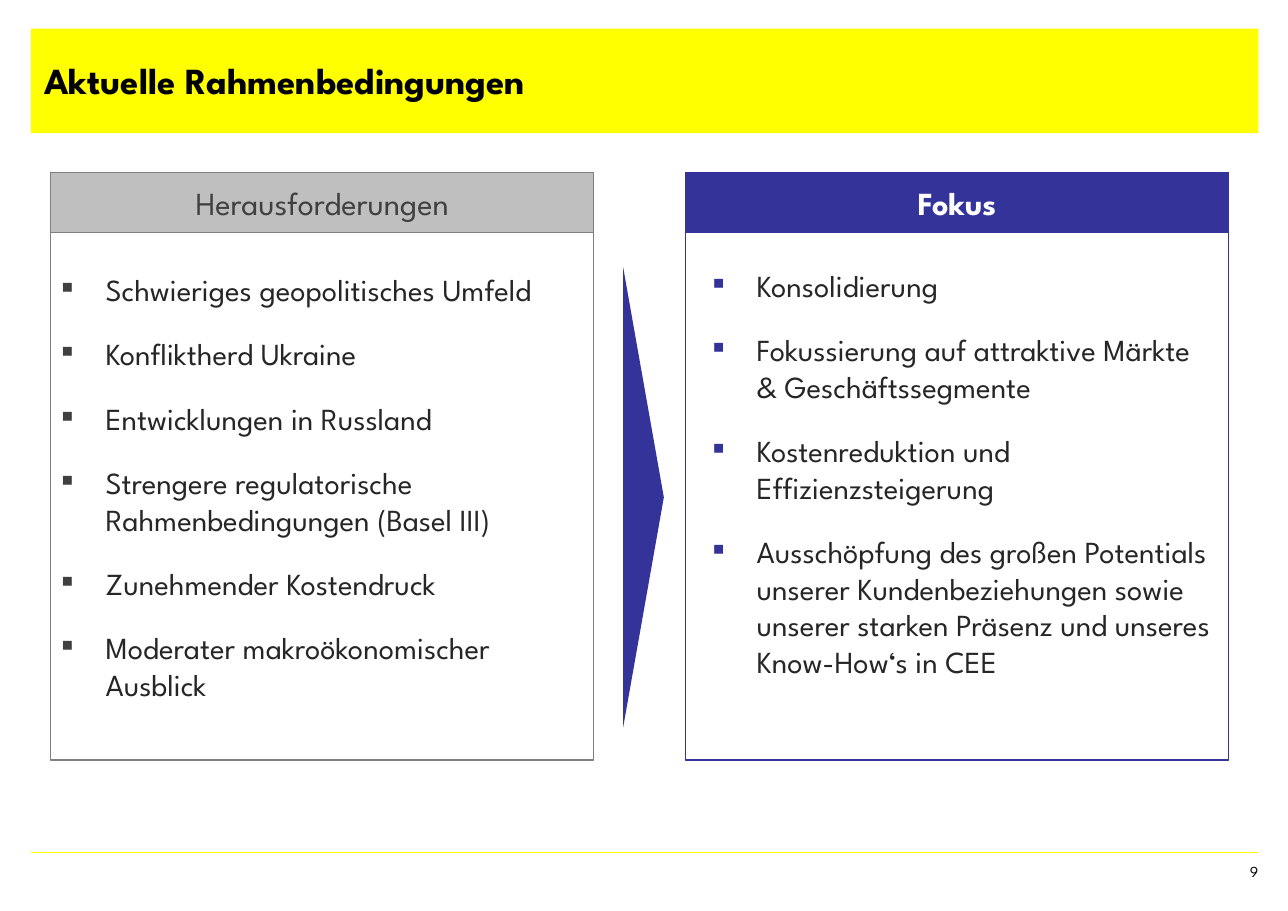
from dataclasses import dataclass

from lxml.etree import SubElement
from pptx import Presentation
from pptx.dml.color import RGBColor
from pptx.enum.shapes import MSO_CONNECTOR, MSO_SHAPE
from pptx.enum.text import MSO_ANCHOR, MSO_AUTO_SIZE, PP_ALIGN
from pptx.oxml.ns import qn
from pptx.shapes.autoshape import Shape
from pptx.slide import Slide
from pptx.text.text import TextFrame, _Paragraph
from pptx.util import Emu, Inches, Pt

FONT = "League Spartan"
WIDTH, HEIGHT = Inches(11.69), Inches(8.27)
COLORS = {
    "yellow": "FFFF00", "blue": "333399", "silver": "BFBFBF", "gray": "808080",
    "dark": "404040", "body": "262626", "black": "000000", "white": "FFFFFF",
}
PANEL_WIDTH, PANEL_BOTTOM = 42.17, 83.43
HEADER_TOP, HEADER_HEIGHT = 18.98, 6.53
INDENT = Inches(0.4)


@dataclass(frozen=True)
class Box:
    """Place and size in percent of the slide's width and height."""
    left: float
    top: float
    width: float
    height: float

    def emu(self) -> tuple[Emu, Emu, Emu, Emu]:
        """Return the box in slide units."""
        return (Emu(round(WIDTH * self.left / 100)), Emu(round(HEIGHT * self.top / 100)),
                Emu(round(WIDTH * self.width / 100)), Emu(round(HEIGHT * self.height / 100)))


@dataclass(frozen=True)
class Style:
    """Size, colour and weight of a run."""
    size: float
    color: str
    bold: bool = False


@dataclass(frozen=True)
class Panel:
    """A headed frame with a bulleted list."""
    title: str
    style: Style
    left: float
    frame_top: float
    fill: str
    edge: str
    bullet: str
    list_box: Box
    items: tuple[str, ...]


PANELS = (
    Panel("Herausforderungen", Style(21, "dark"), 3.93, 25.51, "silver", "gray", "dark",
          Box(3.93, 29.14, 42.17, 69.77),
          ("Schwieriges geopolitisches Umfeld", "Konfliktherd Ukraine",
           "Entwicklungen in Russland",
           "Strengere regulatorische Rahmenbedingungen (Basel III)",
           "Zunehmender Kostendruck", "Moderater makroökonomischer Ausblick")),
    Panel("Fokus", Style(21, "white", True), 53.21, 25.15, "blue", "blue", "blue",
          Box(54.49, 28.66, 40.89, 51.03),
          ("Konsolidierung", "Fokussierung auf attraktive Märkte & Geschäftssegmente",
           "Kostenreduktion und Effizienzsteigerung",
           "Ausschöpfung des großen Potentials unserer Kundenbeziehungen sowie "
           "unserer starken Präsenz und unseres Know-How‘s in CEE")),
)


def rgb(name: str) -> RGBColor:
    """Look up a named colour."""
    return RGBColor.from_string(COLORS[name])


def add_run(p: _Paragraph, text: str, style: Style) -> None:
    """Append one styled run."""
    r = p.add_run()
    r.text = text
    r.font.name, r.font.size, r.font.bold = FONT, Pt(style.size), style.bold
    r.font.color.rgb = rgb(style.color)


def set_label(tf: TextFrame, text: str, style: Style, align: PP_ALIGN, anchor: MSO_ANCHOR) -> None:
    """Fill a frame without margins with a single line."""
    tf.word_wrap, tf.vertical_anchor = True, anchor
    tf.margin_left = tf.margin_top = tf.margin_right = tf.margin_bottom = 0
    p = tf.paragraphs[0]
    p.alignment = align
    add_run(p, text, style)


def add_block(s: Slide, kind: MSO_SHAPE, box: Box, fill: str = "", edge: str = "",
              weight: float = 1) -> Shape:
    """Draw a preset shape with optional fill and outline."""
    sp = s.shapes.add_shape(kind, *box.emu())
    sp.shadow.inherit = False
    if fill:
        sp.fill.solid()
        sp.fill.fore_color.rgb = rgb(fill)
    else:
        sp.fill.background()
    if edge:
        sp.line.color.rgb = rgb(edge)
        sp.line.width = Pt(weight)
    else:
        sp.line.fill.background()
    return sp


def add_label(s: Slide, box: Box, text: str, style: Style, align: PP_ALIGN,
              anchor: MSO_ANCHOR) -> None:
    """Add a text box holding a single line."""
    set_label(s.shapes.add_textbox(*box.emu()).text_frame, text, style, align, anchor)


def set_bullet(p: _Paragraph, color: str) -> None:
    """Give a paragraph a hanging square bullet."""
    ppr = p._p.get_or_add_pPr()
    ppr.set("marL", str(INDENT))
    ppr.set("indent", str(-INDENT))
    SubElement(SubElement(ppr, qn("a:buClr")), qn("a:srgbClr"), val=COLORS[color])
    SubElement(ppr, qn("a:buFont"), typeface=FONT)
    SubElement(ppr, qn("a:buChar"), char="▪")


def add_list(s: Slide, panel: Panel) -> None:
    """Add the bulleted list of a panel."""
    tf = s.shapes.add_textbox(*panel.list_box.emu()).text_frame
    tf.word_wrap, tf.auto_size = True, MSO_AUTO_SIZE.SHAPE_TO_FIT_TEXT
    for i, item in enumerate(panel.items):
        p = tf.add_paragraph() if i else tf.paragraphs[0]
        p.space_before = Pt(18 if i else 0)
        set_bullet(p, panel.bullet)
        add_run(p, item, Style(20, "body"))


def add_panel(s: Slide, panel: Panel) -> None:
    """Draw frame, list and header of a panel."""
    frame = Box(panel.left, panel.frame_top, PANEL_WIDTH, PANEL_BOTTOM - panel.frame_top)
    add_block(s, MSO_SHAPE.RECTANGLE, frame, edge=panel.edge)
    add_list(s, panel)
    header = Box(panel.left, HEADER_TOP, PANEL_WIDTH, HEADER_HEIGHT)
    sp = add_block(s, MSO_SHAPE.RECTANGLE, header, panel.fill, panel.edge, 0.75)
    set_label(sp.text_frame, panel.title, panel.style, PP_ALIGN.CENTER, MSO_ANCHOR.MIDDLE)


def add_rule(s: Slide, box: Box, color: str) -> None:
    """Draw a straight line across a box."""
    x, y, w, h = box.emu()
    line = s.shapes.add_connector(MSO_CONNECTOR.STRAIGHT, x, y, x + w, y + h)
    line.line.color.rgb, line.line.width = rgb(color), Pt(1)
    SubElement(line._element.spPr, qn("a:effectLst"))


def main() -> None:
    """Build and save the slide."""
    prs = Presentation()
    prs.slide_width, prs.slide_height = WIDTH, HEIGHT
    s = prs.slides.add_slide(prs.slide_layouts[6])
    add_block(s, MSO_SHAPE.RECTANGLE, Box(2.4, 3.14, 95.3, 11.49), "yellow")
    add_rule(s, Box(2.4, 93.59, 95.3, 0), "yellow")
    add_label(s, Box(3.42, 3.02, 67.24, 11.49), "Aktuelle Rahmenbedingungen",
              Style(24, "black", True), PP_ALIGN.LEFT, MSO_ANCHOR.MIDDLE)
    add_label(s, Box(57.83, 94.68, 39.86, 5.08), "9", Style(10, "black"),
              PP_ALIGN.RIGHT, MSO_ANCHOR.TOP)
    for panel in PANELS:
        add_panel(s, panel)
    arrow = add_block(s, MSO_SHAPE.ISOSCELES_TRIANGLE, Box(32.08, 52.36, 35.76, 4.47), "blue")
    arrow.rotation = 90
    prs.save("out.pptx")


if __name__ == "__main__":
    main()
